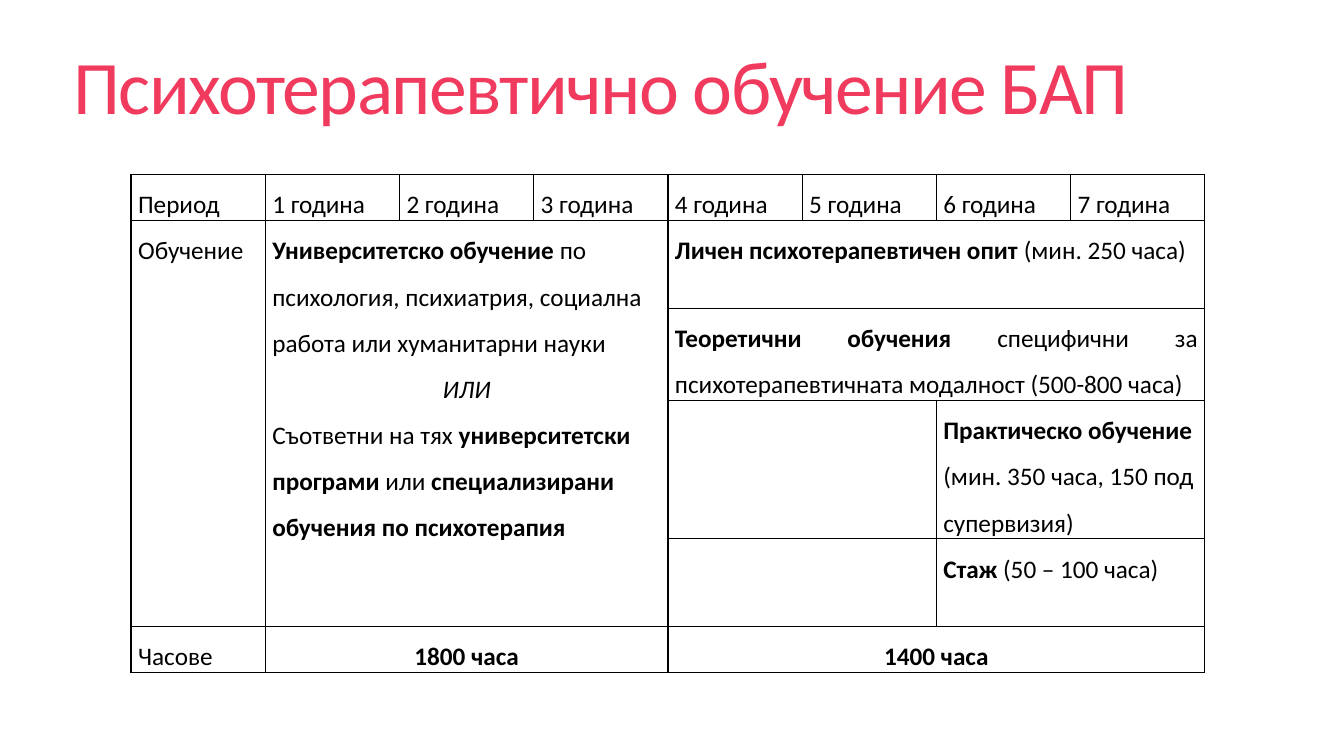
from lxml import etree
from pptx import Presentation
from pptx.dml.color import RGBColor
from pptx.enum.text import MSO_ANCHOR, PP_ALIGN
from pptx.oxml.ns import qn
from pptx.util import Inches, Pt

LEFT, CENTER, JUSTIFY = PP_ALIGN.LEFT, PP_ALIGN.CENTER, PP_ALIGN.JUSTIFY
MIDDLE, TOP = MSO_ANCHOR.MIDDLE, MSO_ANCHOR.TOP
FONT = "Calibri"
BLACK, PINK = "000000", "F03B5E"
COLUMN_WIDTH = 10.65 / 8
ROW_HEIGHTS = [0.41, 0.87, 0.87, 1.32, 0.87, 0.41]
HEADINGS = ["Период", "1 година", "2 година", "3 година",
            "4 година", "5 година", "6 година", "7 година"]

# Each paragraph is (alignment, [(text, style), ...]).
UNIVERSITY = [
    (LEFT, [("Университетско обучение ", "bold"),
            ("по психология, психиатрия, социална работа или хуманитарни науки", "")]),
    (CENTER, [("ИЛИ", "italic")]),
    (LEFT, [("Съответни на тях ", ""), ("университетски програми ", "bold"), ("или", ""),
            (" специализирани обучения по психотерапия", "bold")]),
]
PERSONAL = [(JUSTIFY, [("Личен психотерапевтичен опит ", "bold"), ("(мин. 250 часа)", "")])]
THEORY = [(JUSTIFY, [("Теоретични обучения ", "bold"),
                     ("специфични за психотерапевтичната модалност (500-800 часа)", "")])]
PRACTICE = [(LEFT, [("Практическо обучение ", "bold"),
                    ("(мин. 350 часа, 150 под супервизия)", "")])]
INTERNSHIP = [(LEFT, [("Стаж ", "bold"), ("(50 – 100 часа)", "")])]

# Each block is (row, column, rows spanned, columns spanned, paragraphs).
BLOCKS = [
    (1, 0, 4, 1, [(JUSTIFY, [("Обучение", "")])]),
    (1, 1, 4, 3, UNIVERSITY),
    (1, 4, 1, 4, PERSONAL),
    (2, 4, 1, 4, THEORY),
    (3, 4, 1, 2, []),
    (3, 6, 1, 2, PRACTICE),
    (4, 4, 1, 2, []),
    (4, 6, 1, 2, INTERNSHIP),
    (5, 0, 1, 1, [(JUSTIFY, [("Часове", "")])]),
    (5, 1, 1, 3, [(CENTER, [("1800 часа", "bold")])]),
    (5, 4, 1, 4, [(CENTER, [("1400 часа", "bold")])]),
]


def color(hex_value):
    return RGBColor.from_string(hex_value)


def format_font(font, size, hex_value):
    font.name = FONT
    font.size = Pt(size)
    font.color.rgb = color(hex_value)


def add_title(slide, text):
    title = slide.shapes.title
    title.left, title.top = Inches(0.07), Inches(0)
    title.width, title.height = Inches(11.78), Inches(1.81)
    title.text_frame.text = text
    title.text_frame.vertical_anchor = MIDDLE
    paragraph = title.text_frame.paragraphs[0]
    paragraph.alignment = CENTER
    paragraph.line_spacing = 0.85
    run = paragraph.runs[0]
    format_font(run.font, 54, PINK)
    run.font._element.set("spc", "-120")


def style_cell(cell):
    """Give the cell black one-point borders, no fill and tight margins."""
    properties = cell._tc.get_or_add_tcPr()
    for side in ("a:lnL", "a:lnR", "a:lnT", "a:lnB"):
        line = etree.SubElement(properties, qn(side), w=str(Pt(1)))
        fill = etree.SubElement(line, qn("a:solidFill"))
        etree.SubElement(fill, qn("a:srgbClr"), val=BLACK)
    cell.fill.background()
    cell.margin_left = cell.margin_right = Inches(0.07)
    cell.margin_top = cell.margin_bottom = 0
    cell.vertical_anchor = TOP


def write_cell(cell, paragraphs):
    frame = cell.text_frame
    for index, (alignment, runs) in enumerate(paragraphs):
        paragraph = frame.add_paragraph() if index else frame.paragraphs[0]
        paragraph.alignment = alignment
        paragraph.line_spacing = 1.5
        for text, style in runs:
            run = paragraph.add_run()
            run.text = text
            format_font(run.font, 18, BLACK)
            run.font.bold = style == "bold"
            run.font.italic = style == "italic"


def add_training_table(slide):
    rows, columns = len(ROW_HEIGHTS), len(HEADINGS)
    table = slide.shapes.add_table(
        rows, columns, Inches(1.3), Inches(1.73),
        Inches(COLUMN_WIDTH * columns), Inches(sum(ROW_HEIGHTS))).table
    table.first_row = table.horz_banding = False
    for column in table.columns:
        column.width = Inches(COLUMN_WIDTH)
    for row, height in zip(table.rows, ROW_HEIGHTS):
        row.height = Inches(height)
    for cell in table.iter_cells():
        style_cell(cell)
    for column, heading in enumerate(HEADINGS):
        write_cell(table.cell(0, column), [(JUSTIFY, [(heading, "")])])
    for row, column, row_span, column_span, paragraphs in BLOCKS:
        cell = table.cell(row, column)
        if row_span * column_span > 1:
            cell.merge(table.cell(row + row_span - 1, column + column_span - 1))
        write_cell(cell, paragraphs)


def main():
    presentation = Presentation()
    presentation.slide_width = Inches(13.33)
    presentation.slide_height = Inches(7.5)
    slide = presentation.slides.add_slide(presentation.slide_layouts[5])
    add_title(slide, "Психотерапевтично обучение БАП")
    add_training_table(slide)
    presentation.save("out.pptx")


if __name__ == "__main__":
    main()
